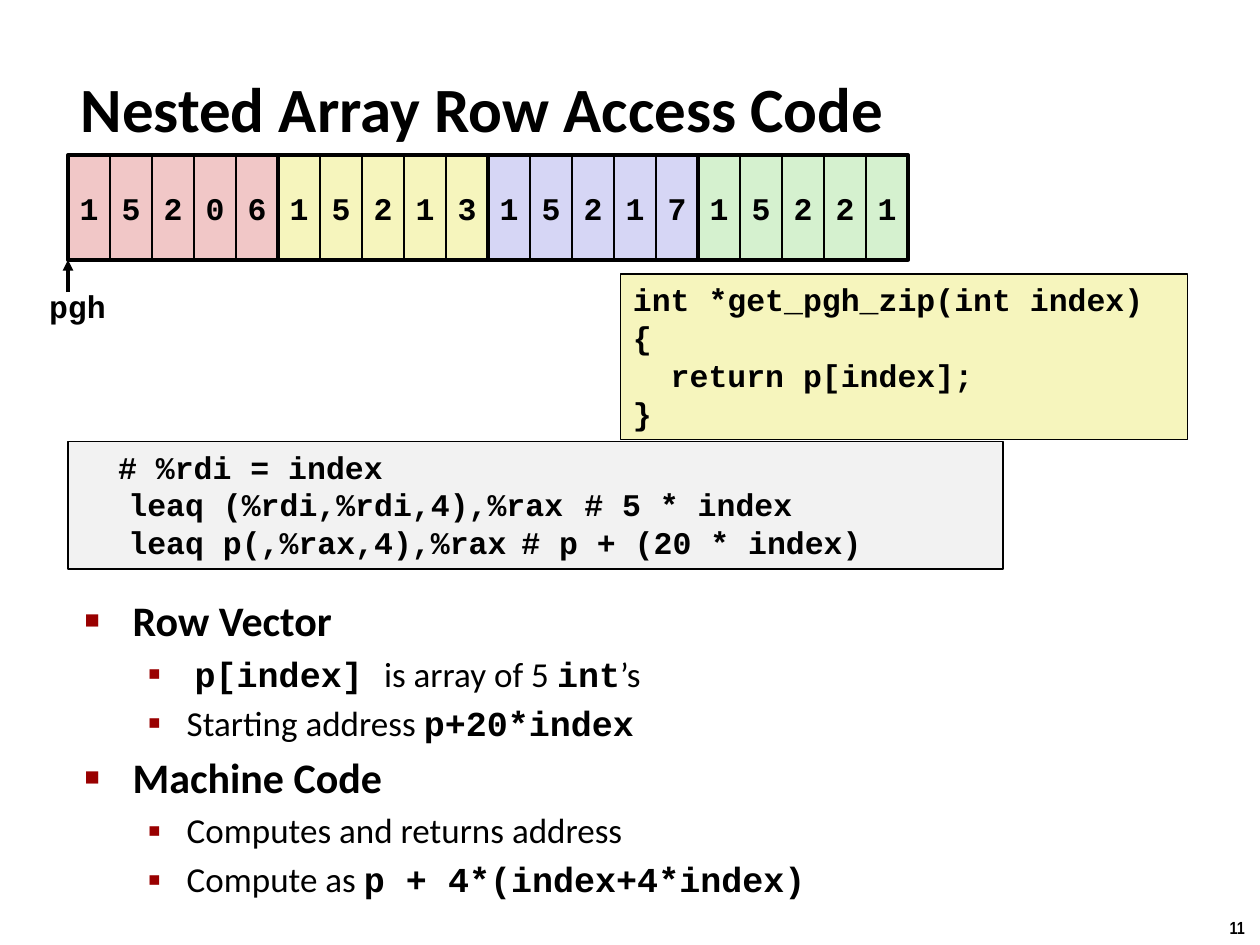
from typing import NamedTuple

from lxml import etree
from pptx import Presentation
from pptx import util as u
from pptx.dml.color import RGBColor
from pptx.enum import shapes, text
from pptx.oxml import ns

BLACK, YELLOW, GREY, BULLET_RED = "000000", "F6F5BD", "F2F2F2", "990000"
SANS, MONO = "Calibri", "Courier New"
ARRAY_LEFT, ARRAY_TOP, CELL_HEIGHT = 1.37, 3.13, 2.11
CELL_WIDTH = 2.54 / 3


class ZipCode(NamedTuple):
    digits: str
    fill: str


class Span(NamedTuple):
    words: str
    code: bool = False


class Bullet(NamedTuple):
    level: int
    spans: list[Span]


class BulletStyle(NamedTuple):
    char: str
    percent: int
    margin: float
    hang: float
    size: int
    bold: bool


ZIP_CODES = [
    ZipCode("15206", "F1C7C7"),
    ZipCode("15213", YELLOW),
    ZipCode("15217", "D6D6F5"),
    ZipCode("15221", "D5F1CF"),
]
BULLETS = [
    Bullet(0, [Span("Row Vector")]),
    Bullet(1, [Span(" "), Span("p[index] ", True), Span("is array of 5 "),
               Span("int", True), Span("’s")]),
    Bullet(1, [Span("Starting address "), Span("p+20*index", True)]),
    Bullet(0, [Span("Machine Code")]),
    Bullet(1, [Span("Computes and returns address")]),
    Bullet(1, [Span("Compute as "), Span("p + 4*(index+4*index)", True)]),
]
BULLET_STYLES = [
    BulletStyle("■", 60, 0.97, 0.97, 24, True),
    BulletStyle("▪", 110, 2.06, 0.79, 20, False),
]
C_CODE = ["int *get_pgh_zip(int index)", "{", "  return p[index];", "}"]
ASSEMBLY = [
    "  # %rdi = index",
    "\tleaq (%rdi,%rdi,4),%rax\t# 5 * index",
    "\tleaq p(,%rax,4),%rax\t# p + (20 * index)",
]


def color(code: str) -> RGBColor:
    return RGBColor.from_string(code)


def add_text(para, words: str, *, size=18, font=MONO, bold=True) -> None:
    span = para.add_run()
    span.text = words
    span.font.size = u.Pt(size)
    span.font.name = font
    span.font.bold = bold
    span.font.color.rgb = color(BLACK)


def add_child(parent, tag: str, **attributes):
    return etree.SubElement(parent, ns.qn(tag), attributes)


def place(shape, left: float, top: float, width: float, height: float) -> None:
    shape.left, shape.top = u.Cm(left), u.Cm(top)
    shape.width, shape.height = u.Cm(width), u.Cm(height)


def set_indent(para, margin: float, hang: float):
    properties = para._p.get_or_add_pPr()
    properties.set("marL", str(u.Cm(margin)))
    properties.set("indent", str(-u.Cm(hang)))
    return properties


def add_box(page, left, top, width, height, *, fill=None, line=1.0):
    box = page.shapes.add_shape(shapes.MSO_SHAPE.RECTANGLE, u.Cm(left),
                                u.Cm(top), u.Cm(width), u.Cm(height))
    box.shadow.inherit = False
    box.line.color.rgb = color(BLACK)
    box.line.width = u.Pt(line)
    if fill:
        box.fill.solid()
        box.fill.fore_color.rgb = color(fill)
    else:
        box.fill.background()
    return box


def add_label(page, words, left, top, width, height, **style) -> None:
    box = page.shapes.add_textbox(u.Cm(left), u.Cm(top), u.Cm(width), u.Cm(height))
    box.text_frame.word_wrap = False
    add_text(box.text_frame.paragraphs[0], words, **style)


def add_code(page, lines, left, top, width, height, *, fill, tabs=()) -> None:
    frame = add_box(page, left, top, width, height, fill=fill).text_frame
    frame.word_wrap = True
    frame.vertical_anchor = text.MSO_ANCHOR.TOP
    for index, line in enumerate(lines):
        para = frame.add_paragraph() if index else frame.paragraphs[0]
        para.alignment = text.PP_ALIGN.LEFT
        if tabs:
            tab_list = add_child(para._p.get_or_add_pPr(), "a:tabLst")
            for stop in tabs:
                add_child(tab_list, "a:tab", pos=str(u.Cm(stop)), algn="l")
        add_text(para, line)


def add_array(page) -> None:
    row_width = 5 * CELL_WIDTH
    for row, zip_code in enumerate(ZIP_CODES):
        for column, digit in enumerate(zip_code.digits):
            left = ARRAY_LEFT + row * row_width + column * CELL_WIDTH
            cell = add_box(page, left, ARRAY_TOP, CELL_WIDTH, CELL_HEIGHT,
                           fill=zip_code.fill)
            frame = cell.text_frame
            frame.word_wrap = False
            frame.vertical_anchor = text.MSO_ANCHOR.MIDDLE
            frame.paragraphs[0].alignment = text.PP_ALIGN.CENTER
            add_text(frame.paragraphs[0], digit)
    for row in range(len(ZIP_CODES)):
        add_box(page, ARRAY_LEFT + row * row_width, ARRAY_TOP, row_width,
                CELL_HEIGHT, line=2.25)


def add_pointer(page) -> None:
    arrow = page.shapes.add_connector(
        shapes.MSO_CONNECTOR.STRAIGHT, u.Cm(ARRAY_LEFT), u.Cm(5.89),
        u.Cm(ARRAY_LEFT), u.Cm(ARRAY_TOP + CELL_HEIGHT))
    arrow.line.color.rgb = color(BLACK)
    arrow.line.width = u.Pt(2)
    add_child(arrow.line._get_or_add_ln(), "a:tailEnd", type="triangle")
    add_child(arrow._element.spPr, "a:effectLst")
    add_label(page, "pgh", 0.74, 5.66, 1.68, 1.02)


def fill_title(title) -> None:
    place(title, 1.37, 1.37, 21.23, 1.6)
    frame = title.text_frame
    frame.auto_size = text.MSO_AUTO_SIZE.NONE
    frame.vertical_anchor = text.MSO_ANCHOR.MIDDLE
    para = frame.paragraphs[0]
    para.alignment = text.PP_ALIGN.LEFT
    set_indent(para, 0.33, 0.33)
    add_text(para, "Nested Array Row Access Code", size=36, font=SANS)


def fill_body(body) -> None:
    place(body, 1.45, 11.86, 20.57, 6.78)
    frame = body.text_frame
    frame.auto_size = text.MSO_AUTO_SIZE.NONE
    for index, bullet in enumerate(BULLETS):
        para = frame.add_paragraph() if index else frame.paragraphs[0]
        para.level = bullet.level
        style = BULLET_STYLES[bullet.level]
        properties = set_indent(para, style.margin, style.hang)
        add_child(add_child(properties, "a:buClr"), "a:srgbClr", val=BULLET_RED)
        add_child(properties, "a:buSzPct", val=str(style.percent * 1000))
        add_child(properties, "a:buFont", typeface="Arial")
        add_child(properties, "a:buChar", char=style.char)
        for span in bullet.spans:
            add_text(para, span.words, size=style.size,
                     font=MONO if span.code else SANS,
                     bold=style.bold or span.code)


def main() -> None:
    deck = Presentation()
    deck.slide_width, deck.slide_height = u.Cm(25.4), u.Cm(19.05)
    page = deck.slides.add_slide(deck.slide_layouts[1])

    # Title and bullet list
    fill_title(page.shapes.title)
    fill_body(page.placeholders[1])

    # Source code and its machine code
    add_code(page, C_CODE, 12.51, 5.53, 11.43, 3.33, fill=YELLOW)
    add_code(page, ASSEMBLY, 1.37, 8.9, 18.85, 2.57, fill=GREY, tabs=(0.97, 7.32))

    # Array in memory with its start pointer
    add_pointer(page)
    add_array(page)

    # Page number
    add_label(page, "11", 24.54, 18.36, 0.86, 0.69, size=10, font="Arial Narrow")

    deck.save("out.pptx")


if __name__ == "__main__":
    main()
